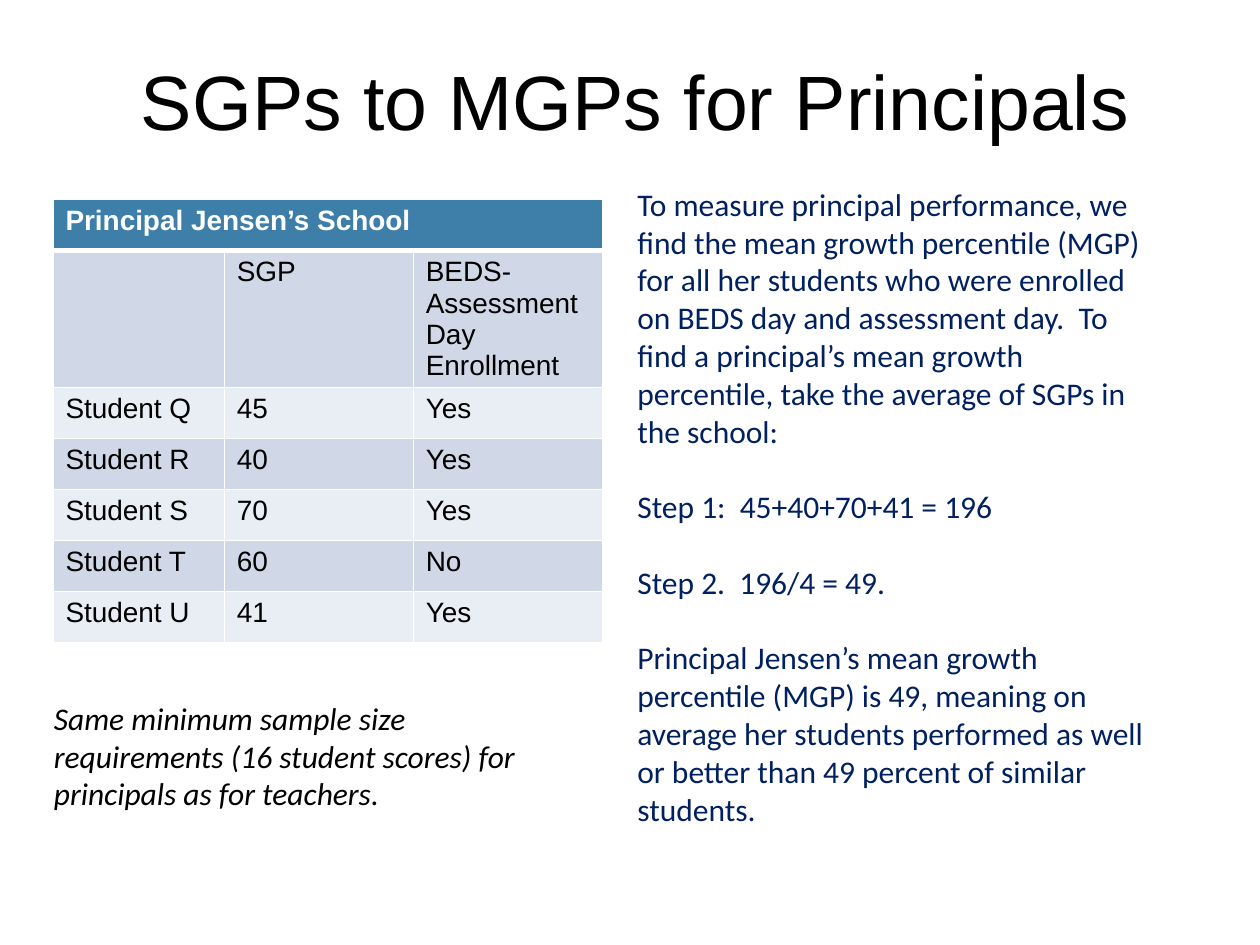
from lxml.etree import SubElement
from pptx import Presentation
from pptx.dml.color import RGBColor
from pptx.enum.text import MSO_ANCHOR, PP_ALIGN
from pptx.oxml.ns import qn
from pptx.util import Inches, Pt

THEME = {
    "heading_font": "Arial", "body_font": "Calibri",
    "title_size": 44, "table_size": 16, "body_size": 18,
    "black": "000000", "white": "FFFFFF", "navy": "002060",
    "header": "3D7FA9", "bands": ("E9EDF4", "D0D8E8"),
}

deck = Presentation()
deck.slide_width, deck.slide_height = Inches(10), Inches(7.5)
page = deck.slides.add_slide(deck.slide_layouts[5])


def area(left, top, width, height):
    """Turn percentages of the slide into left, top, width, height."""
    across, down = deck.slide_width / 100, deck.slide_height / 100
    return [int(left * across), int(top * down), int(width * across), int(height * down)]


def style(para, font, size, color, bold=False, italic=False):
    for span in para.runs:
        span.font.name = THEME[font]
        span.font.size = Pt(THEME[size])
        span.font.color.rgb = RGBColor.from_string(THEME[color])
        span.font.bold, span.font.italic = bold, italic


# Title
title = page.shapes.title
title.left, title.top, title.width, title.height = area(8.3, 3.7, 84.3, 12.4)
title.text_frame.text = "SGPs to MGPs for Principals"
title.text_frame.vertical_anchor = MSO_ANCHOR.BOTTOM
heading = title.text_frame.paragraphs[0]
heading.alignment = PP_ALIGN.CENTER
heading.line_spacing = Pt(36)
style(heading, "heading_font", "title_size", "black")

# Student table
rows = [
    ("Principal Jensen’s School", "", ""),
    ("", "SGP", "BEDS-Assessment Day Enrollment"),
    ("Student Q", "45", "Yes"),
    ("Student R", "40", "Yes"),
    ("Student S", "70", "Yes"),
    ("Student T", "60", "No"),
    ("Student U", "41", "Yes"),
]
column_shares = (13.6, 15, 15)
row_share = 5.4
table = page.shapes.add_table(
    len(rows), len(column_shares),
    *area(4.2, 21.1, sum(column_shares), row_share * len(rows))).table
for column, share in zip(table.columns, column_shares):
    column.width = int(deck.slide_width * share / 100)

for r, row in enumerate(rows):
    for c, value in enumerate(row):
        cell = table.cell(r, c)
        cell.text_frame.text = value
        style(cell.text_frame.paragraphs[0], "heading_font", "table_size",
              "black" if r else "white", bold=r == 0)
        # White rules, heavier between the header and the body
        for side in ("lnL", "lnR", "lnT", "lnB"):
            heavy = (r, side) in ((0, "lnB"), (1, "lnT"))
            rule = SubElement(cell._tc.get_or_add_tcPr(), qn(f"a:{side}"),
                              w=str(Pt(3 if heavy else 1)))
            paint = SubElement(rule, qn("a:solidFill"))
            SubElement(paint, qn("a:srgbClr"), val=THEME["white"])
        cell.fill.solid()
        cell.fill.fore_color.rgb = RGBColor.from_string(
            THEME["bands"][r % 2] if r else THEME["header"])
table.cell(0, 0).merge(table.cell(0, len(column_shares) - 1))

# Sample size note and worked explanation
texts = [
    (area(3.3, 73.3, 43.6, 13.5), "black", True, [
        "Same minimum sample size requirements (16 student scores) for principals as for teachers.",
    ]),
    (area(49.6, 18.9, 43.1, 78.1), "navy", False, [
        "To measure principal performance, we find the mean growth percentile (MGP) for all her "
        "students who were enrolled on BEDS day and assessment day.  To find a principal’s mean "
        "growth percentile, take the average of SGPs in the school:",
        "Step 1:  45+40+70+41 = 196",
        "Step 2.  196/4 = 49.",
        "Principal Jensen’s mean growth percentile (MGP) is 49, meaning on average her students "
        "performed as well or better than 49 percent of similar students.",
    ]),
]
for place, color, italic, lines in texts:
    box = page.shapes.add_textbox(*place)
    box.text_frame.word_wrap = True
    box.text_frame.text = "\n".join(lines)
    for number, para in enumerate(box.text_frame.paragraphs):
        if number:
            para.space_before = Pt(1.2 * THEME["body_size"])
        style(para, "body_font", "body_size", color, italic=italic)

deck.save("out.pptx")
